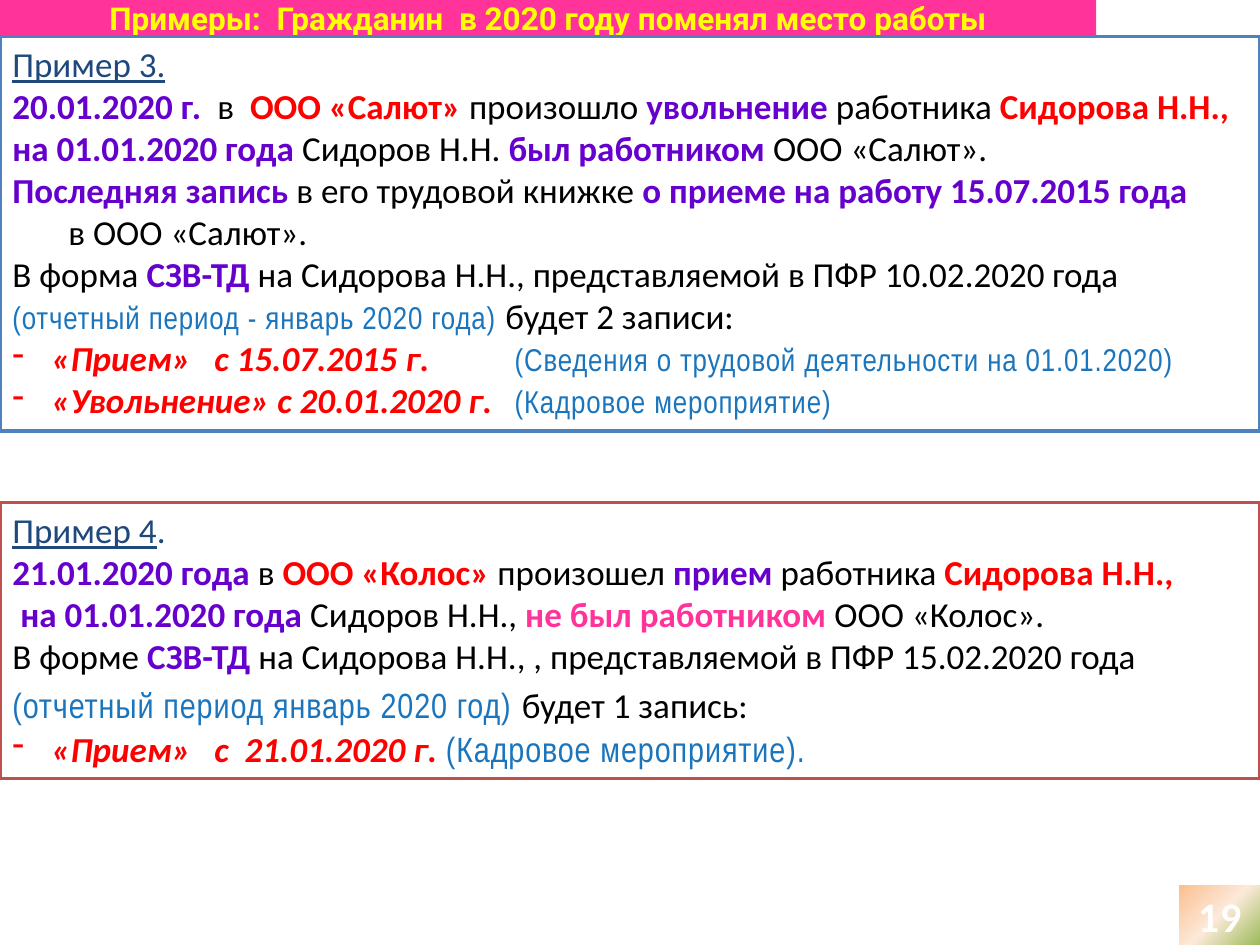
"""Builds the slide with two worked examples of a change of job in 2020."""
from lxml.etree import SubElement
from pptx import Presentation
from pptx.dml.color import RGBColor
from pptx.enum.shapes import MSO_SHAPE
from pptx.enum.text import MSO_ANCHOR, PP_ALIGN
from pptx.oxml import parse_xml
from pptx.oxml.ns import nsdecls, qn
from pptx.util import Pt


def color(value):
    return RGBColor.from_string(value)


def add_box(left, top, width, height, fill=None, line=None):
    shape = slide.shapes.add_shape(MSO_SHAPE.RECTANGLE, Pt(left), Pt(top), Pt(width), Pt(height))
    shape.shadow.inherit = False
    if fill:
        shape.fill.solid()
        shape.fill.fore_color.rgb = color(fill)
    if line:
        shape.line.color.rgb = color(line)
        shape.line.width = Pt(2)
    else:
        shape.line.fill.background()
    shape.text_frame.word_wrap = True
    shape.text_frame.vertical_anchor = MSO_ANCHOR.MIDDLE
    return shape


HEADING = {"color": "1F497D", "underline": True}
HEADING_END = {"color": "1F497D"}
PLAIN = {"color": "000000"}
SPACER = {"color": "000000", "size": 24}
KEY = {"color": "6600CC", "bold": True}
NAME = {"color": "FF0000", "bold": True}
DENIAL = {"color": "FF3399", "bold": True}
EVENT = {"color": "FF0000", "bold": True, "italic": True}
NOTE = {"color": "1A75BD", "font": "Arial Narrow", "spacing": 50}
SMALL_NOTE = {**NOTE, "size": 18}

BULLET = (22.5, -22.5)
HANGING = (32, -32)
FLUSH = (0, 0)
NOTE_TAB = 287

example_4 = [
    (FLUSH, [("Пример 4", HEADING), (".", HEADING_END)]),
    (FLUSH, [("21.01.2020 года ", KEY), ("в ", PLAIN), ("ООО «Колос» ", NAME),
             ("произошел ", PLAIN), ("прием ", KEY), ("работника ", PLAIN),
             ("Сидорова Н.Н.,", NAME)]),
    (FLUSH, [(" ", PLAIN), ("на 01.01.2020 года ", KEY), ("Сидоров Н.Н., ", PLAIN),
             ("не был работником ", DENIAL), ("ООО «Колос».", PLAIN)]),
    (FLUSH, [("В форме ", PLAIN), ("СЗВ-ТД ", KEY),
             ("на Сидорова Н.Н., , представляемой в ПФР 15.02.2020 года ", PLAIN),
             ("(отчетный период январь 2020 год)", NOTE), (" ", SPACER),
             ("будет 1 запись:", PLAIN)]),
    (BULLET, [("«Прием»   с  21.01.2020 г. ", EVENT), ("(Кадровое мероприятие).", NOTE)]),
]
example_3 = [
    (FLUSH, [("Пример 3.", HEADING)]),
    (FLUSH, [("20.01.2020 г.  ", KEY), ("в  ", PLAIN), ("ООО «Салют» ", NAME),
             ("произошло ", PLAIN), ("увольнение", KEY), (" работника ", PLAIN),
             ("Сидорова Н.Н.,", NAME)]),
    (FLUSH, [("на 01.01.2020 года ", KEY), ("Сидоров Н.Н. ", PLAIN),
             ("был работником ", KEY), ("ООО «Салют».", PLAIN)]),
    (HANGING, [("Последняя запись ", KEY), ("в его трудовой книжке ", PLAIN),
               ("о приеме на работу 15.07.2015 года", KEY), ("\n", PLAIN),
               ("в ООО «Салют».", PLAIN)]),
    (FLUSH, [("В форма ", PLAIN), ("СЗВ-ТД", KEY),
             (" на Сидорова Н.Н., представляемой в ПФР 10.02.2020 года ", PLAIN),
             ("(отчетный период - январь 2020 года) ", SMALL_NOTE),
             ("будет 2 записи:", PLAIN)]),
    (BULLET, [("«Прием»   с 15.07.2015 г.", EVENT),
              ("\t(Сведения о трудовой деятельности на 01.01.2020)", SMALL_NOTE)]),
    (BULLET, [("«Увольнение» с 20.01.2020 г.", EVENT),
              ("\t(Кадровое мероприятие)", SMALL_NOTE)]),
]

presentation = Presentation()
presentation.slide_width = Pt(720)
presentation.slide_height = Pt(540)
slide = presentation.slides.add_slide(presentation.slide_layouts[6])

example_4_box = add_box(0, 287.25, 720, 157.7, "FFFFFF", "C0504D")
title_box = add_box(0, 0, 626.4, 20.9, "FF3399")
number_box = add_box(673.9, 506.2, 46.1, 33.8)
example_3_box = add_box(0, 20.9, 720, 225.4, "FFFFFF", "4F81BD")

for box, example in ((example_4_box, example_4), (example_3_box, example_3)):
    frame = box.text_frame
    frame.vertical_anchor = MSO_ANCHOR.TOP
    for index, (indent, pieces) in enumerate(example):
        paragraph = frame.add_paragraph() if index else frame.paragraphs[0]
        paragraph.alignment = PP_ALIGN.LEFT
        properties = paragraph._p.get_or_add_pPr()
        properties.set("marL", str(Pt(indent[0])))
        properties.set("indent", str(Pt(indent[1])))
        if indent == BULLET:
            SubElement(properties, qn("a:buChar"), char="-")
        if any(text.startswith("\t") for text, style in pieces):
            tabs = SubElement(properties, qn("a:tabLst"))
            SubElement(tabs, qn("a:tab"), pos=str(Pt(NOTE_TAB)), algn="l")
        for text, style in pieces:
            if text == "\n":
                paragraph.add_line_break()
                continue
            run = paragraph.add_run()
            run.text = text
            run.font.name = style.get("font", "Calibri")
            run.font.size = Pt(style.get("size", 20))
            run.font.color.rgb = color(style["color"])
            run.font.bold = style.get("bold", False)
            run.font.italic = style.get("italic", False)
            run.font.underline = style.get("underline", False)
            if "spacing" in style:
                run._r.get_or_add_rPr().set("spc", str(style["spacing"]))

for box, text, font, size, text_color in (
    (title_box, "Примеры:  Гражданин  в 2020 году поменял место работы", "Roboto", 18, "FFFF00"),
    (number_box, "19", "Calibri", 24, "FFFEFE"),
):
    paragraph = box.text_frame.paragraphs[0]
    paragraph.text = text
    paragraph.alignment = PP_ALIGN.CENTER
    paragraph.font.name = font
    paragraph.font.size = Pt(size)
    paragraph.font.bold = True
    paragraph.font.color.rgb = color(text_color)

number_properties = number_box.text_frame.paragraphs[0].runs[0]._r.get_or_add_rPr()
number_properties.set("spc", "50")
number_properties.insert(0, parse_xml(
    f'<a:ln {nsdecls("a")} w="12700"><a:solidFill><a:srgbClr val="E78738"/></a:solidFill></a:ln>'))

stops = "".join(
    f'<a:gs pos="{position * 1000}"><a:srgbClr val="{value}"/></a:gs>'
    for position, value in ((0, "FAC090"), (50, "FDEADA"), (100, "9BBB59")))
gradient = parse_xml(
    f'<a:gradFill {nsdecls("a")}><a:gsLst>{stops}</a:gsLst>'
    '<a:path path="circle"><a:fillToRect r="100000" b="100000"/></a:path></a:gradFill>')
number_box._element.spPr.find(qn("a:prstGeom")).addnext(gradient)

presentation.save("out.pptx")
